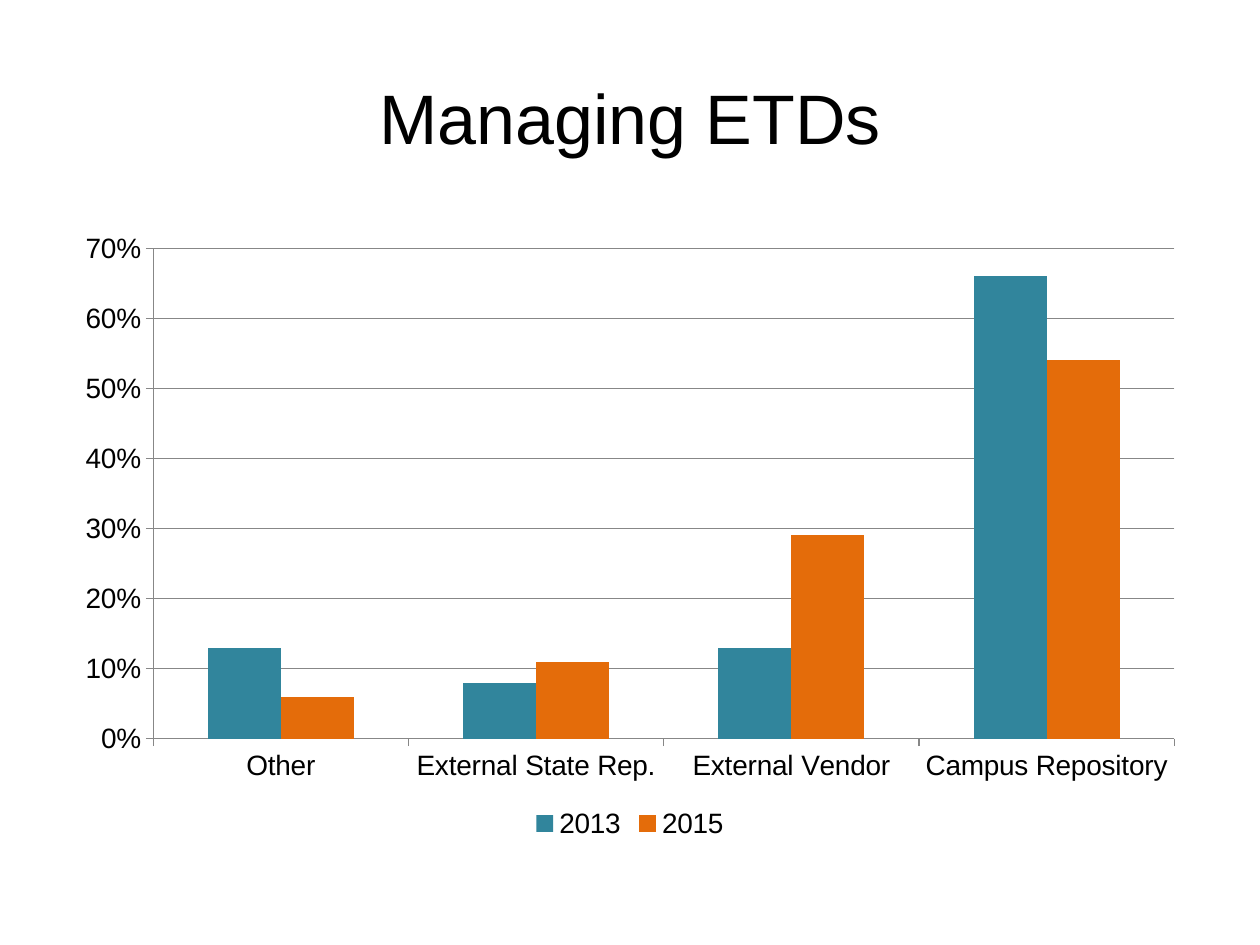
from dataclasses import dataclass

from pptx import Presentation
from pptx.chart.data import CategoryChartData as ChartData
from pptx.dml.color import RGBColor as RGB
from pptx.enum.chart import XL_CHART_TYPE as Kind
from pptx.enum.chart import XL_LEGEND_POSITION as Side
from pptx.enum.chart import XL_TICK_MARK as Tick
from pptx.enum.text import MSO_ANCHOR as Anchor
from pptx.enum.text import PP_ALIGN as Align
from pptx.util import Cm, Pt


@dataclass(frozen=True)
class Theme:
    face: str = "Arial"
    ink: RGB = RGB(0, 0, 0)
    grid: RGB = RGB(0x87, 0x87, 0x87)
    bars: tuple = (RGB(0x31, 0x85, 0x9C), RGB(0xE4, 0x6C, 0x0A))
    head: Pt = Pt(40)
    body: Pt = Pt(16)


THEME = Theme()
LEFT, WIDTH = Cm(1.27), Cm(22.86)
GROUPS = ("Other", "External State Rep.", "External Vendor", "Campus Repository")
SHARES = {
    "2013": (0.13, 0.08, 0.13, 0.66),
    "2015": (0.06, 0.11, 0.29, 0.54),
}


def set_font(font, size):
    font.name = THEME.face
    font.size = size
    font.color.rgb = THEME.ink


def set_line(line):
    line.color.rgb = THEME.grid
    line.width = Pt(0.75)


def add_title(slide, text):
    box = slide.shapes.add_textbox(LEFT, Cm(0.76), WIDTH, Cm(3.18))
    frame = box.text_frame
    frame.word_wrap = True
    frame.vertical_anchor = Anchor.MIDDLE
    frame.text = text
    line = frame.paragraphs[0]
    line.alignment = Align.CENTER
    set_font(line.runs[0].font, THEME.head)


def add_bars(slide):
    data = ChartData(number_format="0%")
    data.categories = GROUPS
    for year, shares in SHARES.items():
        data.add_series(year, shares)
    chart = slide.shapes.add_chart(
        Kind.COLUMN_CLUSTERED, LEFT, Cm(4.45), WIDTH, Cm(12.57), data
    ).chart
    chart.has_title = False
    set_font(chart.font, THEME.body)

    # Columns
    plot = chart.plots[0]
    plot.gap_width = 150
    plot.overlap = 0
    plot.vary_by_categories = False
    for bar, color in zip(plot.series, THEME.bars):
        bar.format.fill.solid()
        bar.format.fill.fore_color.rgb = color

    # Axes
    for axis in (chart.category_axis, chart.value_axis):
        axis.major_tick_mark = Tick.OUTSIDE
        axis.minor_tick_mark = Tick.NONE
        set_line(axis.format.line)
    scale = chart.value_axis
    scale.minimum_scale, scale.maximum_scale = 0, 0.7
    scale.major_unit = 0.1
    scale.has_major_gridlines = True
    set_line(scale.major_gridlines.format.line)
    scale.tick_labels.number_format = "0%"
    scale.tick_labels.number_format_is_linked = False

    # Legend
    chart.has_legend = True
    chart.legend.position = Side.BOTTOM
    chart.legend.include_in_layout = False


def main():
    deck = Presentation()
    deck.slide_width, deck.slide_height = Cm(25.4), Cm(19.05)
    slide = deck.slides.add_slide(deck.slide_layouts[6])
    add_title(slide, "Managing ETDs")
    add_bars(slide)
    deck.save("out.pptx")


if __name__ == "__main__":
    main()
